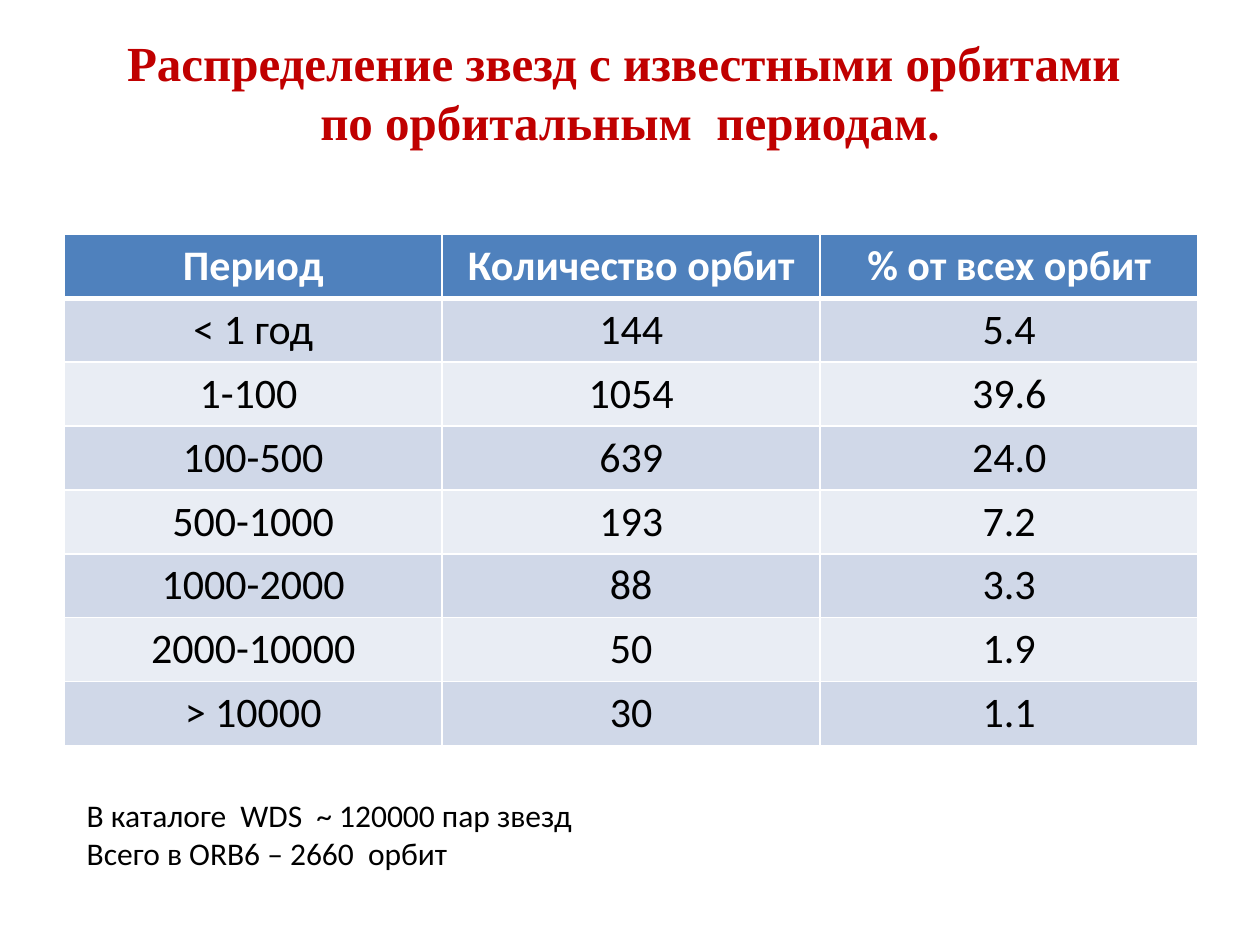
import pptx
import pptx.util
import pptx.dml.color
import pptx.enum.text
import pptx.oxml
import pptx.oxml.ns

theme = {
    "head": ("Times New Roman", 28, "C00000", True),
    "top": ("Calibri", 24, "FFFFFF", True),
    "cell": ("Calibri", 24, "000000", False),
    "note": ("Calibri", 18, "000000", False),
    "fills": ("4F81BD", "D0D8E8", "E9EDF4"),
    "rule": "FFFFFF",
}
rows = [
    ("Период", "Количество орбит", "% от всех орбит"),
    ("< 1 год", "144", "5.4"),
    ("1-100 ", "1054", "39.6"),
    ("100-500", "639", "24.0"),
    ("500-1000", "193", "7.2"),
    ("1000-2000", "88", "3.3"),
    ("2000-10000", "50", "1.9"),
    ("> 10000", "30", "1.1"),
]
notes = ["В каталоге  WDS  ~ 120000 пар звезд", "Всего в ORB6 – 2660  орбит"]

inch = pptx.util.Inches
rgb = pptx.dml.color.RGBColor.from_string
mid = pptx.enum.text.PP_ALIGN.CENTER


def add_run(para, text, style):
    run = para.add_run()
    run.text = text
    font = run.font
    font.name, size, tone, font.bold = theme[style]
    font.size = pptx.util.Pt(size)
    font.color.rgb = rgb(tone)


def add_rule(cell, side, width):
    cell._tc.get_or_add_tcPr().append(pptx.oxml.parse_xml(
        f'<a:{side} {pptx.oxml.ns.nsdecls("a")} w="{pptx.util.Pt(width)}"><a:solidFill>'
        f'<a:srgbClr val="{theme["rule"]}"/></a:solidFill></a:{side}>'))


deck = pptx.Presentation()
wide, high = inch(10), inch(7.5)
deck.slide_width, deck.slide_height = wide, high
slide = deck.slides.add_slide(deck.slide_layouts[5])

title = slide.shapes.title
title.left, title.top = 0, int(high * 0.04)
title.width, title.height = wide, inch(0.85)
frame = title.text_frame
frame.auto_size = pptx.enum.text.MSO_AUTO_SIZE.NONE
frame.vertical_anchor = pptx.enum.text.MSO_ANCHOR.MIDDLE
para = frame.paragraphs[0]
para.alignment = mid
add_run(para, "Распределение звезд с известными орбитами ", "head")
para.add_line_break()
add_run(para, "по орбитальным  периодам.", "head")

table = slide.shapes.add_table(
    len(rows), len(rows[0]), inch(0.51), inch(1.86), int(wide * 0.9), inch(4)).table
for r, row in enumerate(rows):
    for c, text in enumerate(row):
        cell = table.cell(r, c)
        for side in ("lnL", "lnR", "lnT", "lnB"):
            edge = (r == 0 and side == "lnB") or (r == 1 and side == "lnT")
            add_rule(cell, side, 3 if edge else 1)
        cell.fill.solid()
        cell.fill.fore_color.rgb = rgb(theme["fills"][2 - r % 2 if r else 0])
        para = cell.text_frame.paragraphs[0]
        para.alignment = mid
        add_run(para, text, "cell" if r else "top")

note = slide.shapes.add_textbox(inch(0.59), inch(6.27), int(wide * 0.41), inch(0.71))
frame = note.text_frame
frame.word_wrap = False
frame.auto_size = pptx.enum.text.MSO_AUTO_SIZE.SHAPE_TO_FIT_TEXT
for n, text in enumerate(notes):
    para = frame.add_paragraph() if n else frame.paragraphs[0]
    para.alignment = pptx.enum.text.PP_ALIGN.LEFT
    add_run(para, text, "note")

deck.save("out.pptx")
